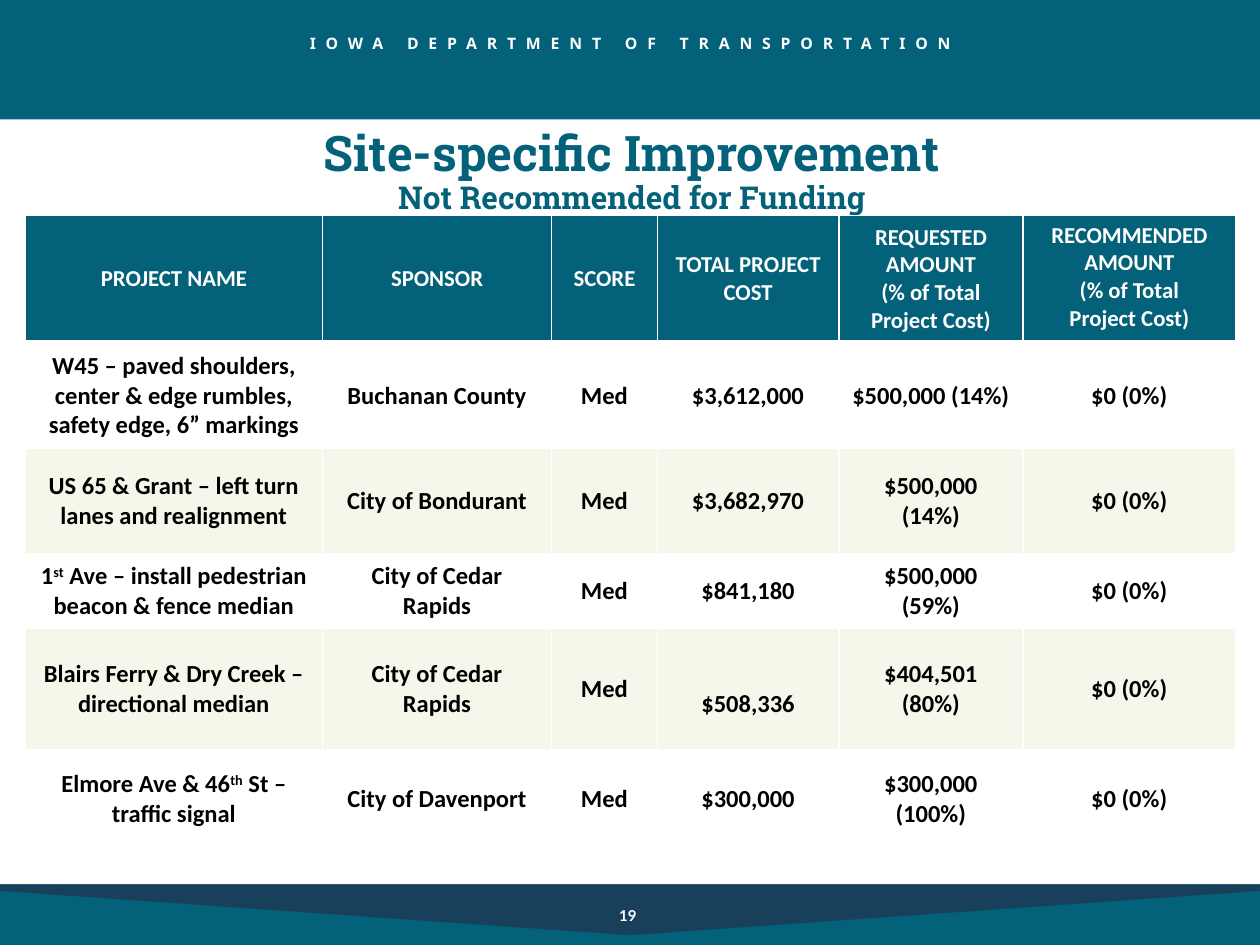
from typing import NamedTuple

from lxml import etree
from pptx import Presentation
from pptx.dml.color import RGBColor
from pptx.enum.shapes import MSO_SHAPE
from pptx.enum.text import MSO_ANCHOR, MSO_AUTO_SIZE, PP_ALIGN
from pptx.oxml.ns import qn
from pptx.util import Cm, Pt

RECTANGLE = MSO_SHAPE.RECTANGLE
CENTER = PP_ALIGN.CENTER
TOP, MIDDLE = MSO_ANCHOR.TOP, MSO_ANCHOR.MIDDLE
NO_AUTOFIT = MSO_AUTO_SIZE.NONE

TEAL, NAVY, WHITE, BLACK, CREAM = "03617A", "19405B", "FFFFFF", "000000", "F5F7EB"
SLIDE_WIDTH, SLIDE_HEIGHT = 25.4, 19.05
FOOTER_TOP = 17.83
COLUMN_WIDTHS = (5.99, 4.62, 2.13, 3.66, 3.71, 4.29)
ROW_HEIGHTS = (2.57, 2.13, 2.13, 1.5, 2.44, 2.01)
HEADINGS = (
    "PROJECT NAME",
    "SPONSOR",
    "SCORE",
    "TOTAL PROJECT COST",
    "REQUESTED AMOUNT\n(% of Total Project Cost)",
    "RECOMMENDED AMOUNT\n(% of Total\vProject Cost)",
)


class Box(NamedTuple):
    left: float
    top: float
    width: float
    height: float

    def lengths(self) -> list:
        return [Cm(value) for value in self]


class TextStyle(NamedTuple):
    font: str
    size: float
    color: str


class Project(NamedTuple):
    """A table row; text between carets in the name is superscript."""
    name: str
    sponsor: str
    cost: str
    requested: str
    score: str = "Med"
    recommended: str = "$0 (0%)"

    def cells(self) -> tuple:
        return (self.name, self.sponsor, self.score, self.cost,
                self.requested, self.recommended)


PROJECTS = (
    Project("W45 – paved shoulders, center & edge rumbles, safety edge, 6” markings",
            "Buchanan County", "$3,612,000", "$500,000 (14%)"),
    Project("US 65 & Grant – left turn lanes and realignment",
            "City of Bondurant", "$3,682,970", "$500,000\n(14%)"),
    Project("1^st^ Ave – install pedestrian beacon & fence median",
            "City of Cedar Rapids", "$841,180", "$500,000\n(59%)"),
    Project("Blairs Ferry & Dry Creek – directional median",
            "City of Cedar Rapids", "$508,336", "$404,501\n(80%)"),
    Project("Elmore Ave & 46^th^ St – traffic signal",
            "City of Davenport", "$300,000", "$300,000\n(100%)"),
)
LOWERED_COST = (4, 3)

BANNER_STYLE = TextStyle("Noto Sans", 9, WHITE)
NUMBER_STYLE = TextStyle("Lato", 8.6, WHITE)
TITLE_STYLE = TextStyle("Roboto Slab", 28, TEAL)
HEADING_STYLE = TextStyle("Calibri", 13, WHITE)
BODY_STYLE = TextStyle("Calibri", 14, BLACK)


def rgb(color: str) -> RGBColor:
    return RGBColor.from_string(color)


def paint(shape, color: str) -> None:
    shape.fill.solid()
    shape.fill.fore_color.rgb = rgb(color)
    shape.line.fill.background()
    shape.shadow.inherit = False


def add_band(slide, box: Box, color: str) -> None:
    paint(slide.shapes.add_shape(RECTANGLE, *box.lengths()), color)


def add_footer_chevron(slide) -> None:
    middle, shoulder, tip = SLIDE_WIDTH / 2, FOOTER_TOP + 0.13, FOOTER_TOP + 1.02
    points = [(SLIDE_WIDTH, FOOTER_TOP), (SLIDE_WIDTH, shoulder),
              (middle + 0.06, tip), (middle - 0.06, tip), (0, shoulder)]
    builder = slide.shapes.build_freeform(0, Cm(FOOTER_TOP))
    builder.add_line_segments([(Cm(x), Cm(y)) for x, y in points])
    paint(builder.convert_to_shape(), NAVY)


def format_text(text_frame, style: TextStyle) -> None:
    for paragraph in text_frame.paragraphs:
        paragraph.alignment = CENTER
        for run in paragraph.runs:
            run.font.name = style.font
            run.font.size = Pt(style.size)
            run.font.bold = True
            run.font.color.rgb = rgb(style.color)


def add_label(slide, box: Box, text: str, style: TextStyle, anchor=MIDDLE):
    text_frame = slide.shapes.add_textbox(*box.lengths()).text_frame
    text_frame.word_wrap = True
    text_frame.vertical_anchor = anchor
    text_frame.text = text
    format_text(text_frame, style)
    return text_frame


def set_title(slide) -> None:
    title = slide.shapes.title
    title.left, title.top, title.width, title.height = Box(0.58, 2.82, 24.31, 1.32).lengths()
    text_frame = title.text_frame
    text_frame.text = "Site-specific Improvement\nNot Recommended for Funding"
    text_frame.auto_size = NO_AUTOFIT
    text_frame.vertical_anchor = MIDDLE
    format_text(text_frame, TITLE_STYLE)
    for paragraph in text_frame.paragraphs:
        paragraph.line_spacing = 0.9
        paragraph.space_before = Pt(0)
    text_frame.paragraphs[1].runs[0].font.size = Pt(18)


def set_borders(cell, bottom: float) -> None:
    properties = cell._tc.get_or_add_tcPr()
    for side, width in (("L", 1), ("R", 1), ("T", 1), ("B", bottom)):
        line = etree.SubElement(properties, qn(f"a:ln{side}"), w=str(Pt(width)))
        fill = etree.SubElement(line, qn("a:solidFill"))
        etree.SubElement(fill, qn("a:srgbClr"), val=WHITE)


def write_cell(cell, text: str, style: TextStyle) -> None:
    if "^" in text:
        paragraph = cell.text_frame.paragraphs[0]
        for index, piece in enumerate(text.split("^")):
            run = paragraph.add_run()
            run.text = piece
            if index % 2:
                run._r.get_or_add_rPr().set("baseline", "30000")
    else:
        cell.text_frame.text = text
    format_text(cell.text_frame, style)
    cell.vertical_anchor = MIDDLE
    cell.margin_left = cell.margin_right = Cm(0.25)


def add_project_table(slide) -> None:
    rows = [HEADINGS] + [project.cells() for project in PROJECTS]
    box = Box(0.51, 4.34, sum(COLUMN_WIDTHS), sum(ROW_HEIGHTS))
    table = slide.shapes.add_table(len(rows), len(HEADINGS), *box.lengths()).table
    table.first_row = table.horz_banding = False
    for column, width in zip(table.columns, COLUMN_WIDTHS):
        column.width = Cm(width)
    for row_index, texts in enumerate(rows):
        table.rows[row_index].height = Cm(ROW_HEIGHTS[row_index])
        is_heading = row_index == 0
        for column_index, text in enumerate(texts):
            cell = table.cell(row_index, column_index)
            write_cell(cell, text, HEADING_STYLE if is_heading else BODY_STYLE)
            set_borders(cell, 3 if is_heading else 1)
            if is_heading or row_index % 2 == 0:
                cell.fill.solid()
                cell.fill.fore_color.rgb = rgb(TEAL if is_heading else CREAM)
            else:
                cell.fill.background()
    table.cell(0, len(HEADINGS) - 1).vertical_anchor = TOP
    table.cell(*LOWERED_COST).margin_top = Cm(0.73)


def main() -> None:
    presentation = Presentation()
    presentation.slide_width = Cm(SLIDE_WIDTH)
    presentation.slide_height = Cm(SLIDE_HEIGHT)
    slide = presentation.slides.add_slide(presentation.slide_layouts[5])
    add_band(slide, Box(0, 0, SLIDE_WIDTH, 2.41), TEAL)
    add_band(slide, Box(0, FOOTER_TOP, SLIDE_WIDTH, SLIDE_HEIGHT - FOOTER_TOP), TEAL)
    add_footer_chevron(slide)
    banner = add_label(slide, Box(0, 0.56, SLIDE_WIDTH, 0.64),
                       "IOWA DEPARTMENT OF TRANSPORTATION", BANNER_STYLE, TOP)
    banner.paragraphs[0].runs[0]._r.get_or_add_rPr().set("spc", "560")
    add_label(slide, Box(9.8, 18.16, 5.72, 0.58), "19", NUMBER_STYLE)
    add_project_table(slide)
    set_title(slide)
    presentation.save("out.pptx")


if __name__ == "__main__":
    main()
